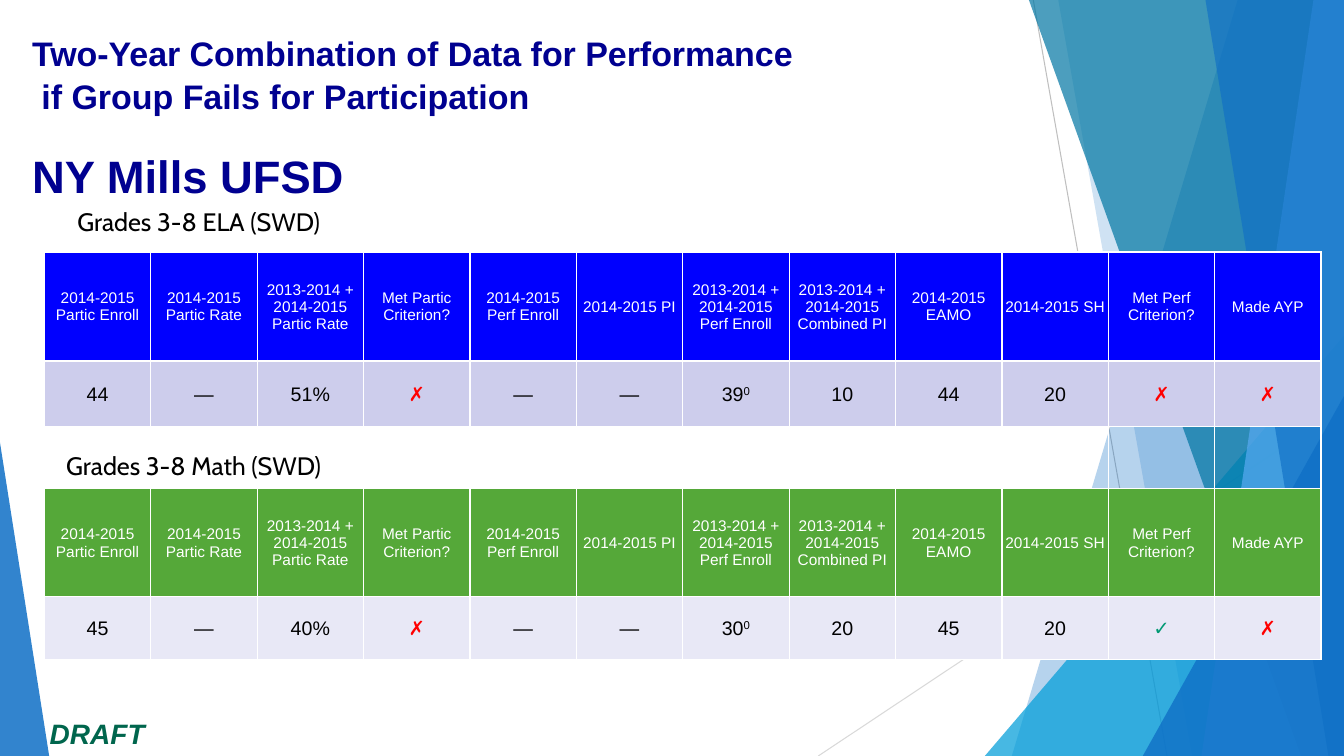
from dataclasses import dataclass

from lxml import etree
from pptx import Presentation
from pptx.dml.color import RGBColor
from pptx.enum.shapes import MSO_CONNECTOR, MSO_SHAPE
from pptx.enum.text import MSO_ANCHOR, PP_ALIGN
from pptx.oxml.ns import qn
from pptx.util import Cm, Pt

LINE = MSO_CONNECTOR.STRAIGHT
TRIANGLE = MSO_SHAPE.ISOSCELES_TRIANGLE
MIDDLE = MSO_ANCHOR.MIDDLE
LEFT, CENTER = PP_ALIGN.LEFT, PP_ALIGN.CENTER
WIDE, HIGH = 33.87, 19.05
WHITE, BLACK, NAVY = "FFFFFF", "000000", "000090"


@dataclass
class Band:
    """Facet with a sloped left side that fills up to the right slide edge."""
    top: float
    base: float
    color: str
    alpha: int


@dataclass
class Wedge:
    """Right-angled triangle standing on the bottom slide edge."""
    left: float
    top: float
    width: float
    apex: float
    color: str
    alpha: int


@dataclass
class Ray:
    start: tuple[float, float]
    end: tuple[float, float]
    color: str


@dataclass
class Line:
    text: str
    size: float
    before: float = 0


@dataclass
class Label:
    left: float
    top: float
    width: float
    height: float
    lines: list[Line]
    font: str
    color: str
    bold: bool = False
    italic: bool = False
    align: PP_ALIGN = LEFT


@dataclass
class Row:
    height: float
    texts: list[str]
    fill: str | None = None
    size: float = 14
    color: str = BLACK
    base: float = 1


RAYS = [
    Ray((26.04, 0), (29.41, HIGH), "BFBFBF"),
    Ray((WIDE, 10.24), (20.62, HIGH), "D9D9D9"),
]
FACETS = [
    Band(31.19, 25.5, "0F6FC6", 30),
    Band(26.67, 30.05, "0F6FC6", 20),
    Wedge(24.82, 8.46, 9.05, 1, "009DD9", 72),
    Band(25.93, 32.79, "0076A3", 70),
    Band(33.1, 30.28, "59AAF2", 70),
    Band(30.38, 33.48, "0F6FC6", 65),
    Wedge(28.8, 9.98, 5.07, 1, "0F6FC6", 80),
    Wedge(0, 11.15, 1.24, 0, "0F6FC6", 85),
]
HEADS = [
    "2014-2015 Partic Enroll", "2014-2015 Partic Rate",
    "2013-2014 + 2014-2015 Partic Rate", "Met Partic Criterion?",
    "2014-2015 Perf Enroll", "2014-2015 PI",
    "2013-2014 + 2014-2015 Perf Enroll", "2013-2014 + 2014-2015 Combined PI",
    "2014-2015 EAMO", "2014-2015 SH", "Met Perf Criterion?", "Made AYP",
]
# A caret marks the start of a superscript.
ELA = ["44", "—", "51%", "✗", "—", "—", "39^0", "10", "44", "20", "✗", "✗"]
MATH = ["45", "—", "40%", "✗", "—", "—", "30^0", "20", "45", "20", "✓", "✗"]
MARKS = {"✗": "FF0000", "✓": "009973"}
ROWS = [
    Row(2.74, HEADS, "0000FF", 11, WHITE, 1.5),
    Row(1.66, ELA, "CDCDEC"),
    Row(1.55, [""] * len(HEADS)),
    Row(2.74, HEADS, "55A839", 11, WHITE),
    Row(1.57, MATH, "E8E8F6"),
]
TITLE = [
    Line("Two-Year Combination of Data for Performance", 24.3),
    Line(" if Group Fails for Participation", 24.3, 1.4),
    Line("NY Mills UFSD", 32.4, 22.5),
]
LABELS = [
    Label(0.56, 0.7, 33.02, 4.3, TITLE, "Arial", NAVY, bold=True),
    Label(1.7, 5.08, 9.88, 1.02, [Line("Grades 3-8 ELA (SWD)", 18)], "Cabin", BLACK),
    Label(1.42, 11.23, 9.88, 1.02, [Line("Grades 3-8 Math (SWD)", 18)], "Cabin", BLACK),
    Label(0.05, 17.93, 4.8, 1.12, [Line("DRAFT", 20)], "Arial", "00664D",
          bold=True, italic=True, align=CENTER),
]


def rgb(code: str) -> RGBColor:
    return RGBColor.from_string(code)


def draw_ray(shapes, ray: Ray) -> None:
    x, y = ray.start
    line = shapes.add_connector(LINE, Cm(x), Cm(y), *map(Cm, ray.end))
    line.line.color.rgb = rgb(ray.color)
    line.line.width = Pt(0.75)
    etree.SubElement(line._element.spPr, qn("a:effectLst"))


def draw_facet(shapes, facet: Band | Wedge) -> None:
    if isinstance(facet, Band):
        build = shapes.build_freeform(Cm(facet.top), 0)
        points = [(WIDE, 0), (WIDE, HIGH), (facet.base, HIGH)]
        build.add_line_segments([(Cm(x), Cm(y)) for x, y in points])
        shape = build.convert_to_shape()
    else:
        shape = shapes.add_shape(TRIANGLE, Cm(facet.left), Cm(facet.top),
                                 Cm(facet.width), Cm(HIGH - facet.top))
        shape.adjustments[0] = facet.apex
    shape.shadow.inherit = False
    shape.line.fill.background()
    shape.fill.solid()
    shape.fill.fore_color.rgb = rgb(facet.color)
    tint = shape._element.spPr.find(qn("a:solidFill"))[0]
    etree.SubElement(tint, qn("a:alpha"), val=str(facet.alpha * 1000))


def draw_label(shapes, label: Label) -> None:
    box = shapes.add_textbox(Cm(label.left), Cm(label.top),
                             Cm(label.width), Cm(label.height))
    frame = box.text_frame
    frame.word_wrap = True
    frame.text = "\n".join(line.text for line in label.lines)
    for par, line in zip(frame.paragraphs, label.lines):
        par.alignment = label.align
        par.space_before = Pt(line.before)
        font = par.runs[0].font
        font.name, font.size = label.font, Pt(line.size)
        font.bold, font.italic = label.bold, label.italic
        font.color.rgb = rgb(label.color)


def set_edges(cell, top: float, base: float) -> None:
    props = cell._tc.get_or_add_tcPr()
    for side, width in zip("LRTB", (1, 1, top, base)):
        edge = etree.SubElement(props, qn(f"a:ln{side}"), w=str(Pt(width)))
        fill = etree.SubElement(edge, qn("a:solidFill"))
        etree.SubElement(fill, qn("a:srgbClr"), val=WHITE)


def fill_cell(cell, text: str, row: Row, top: float) -> None:
    set_edges(cell, top, row.base)
    if row.fill is None:
        cell.fill.background()
        return
    cell.fill.solid()
    cell.fill.fore_color.rgb = rgb(row.fill)
    cell.vertical_anchor = MIDDLE
    cell.margin_left = cell.margin_right = cell.margin_top = Cm(0.03)
    cell.margin_bottom = 0
    par = cell.text_frame.paragraphs[0]
    par.alignment = CENTER
    main, _, power = text.partition("^")
    par.text = main
    if power:
        raised = par.add_run()
        raised.text = power
        raised._r.get_or_add_rPr().set("baseline", "30000")
    for run in par.runs:
        run.font.name, run.font.size = "Arial", Pt(row.size)
        run.font.color.rgb = rgb(MARKS.get(text, row.color))


def draw_table(shapes, rows: list[Row]) -> None:
    count = len(HEADS)
    tall = sum(row.height for row in rows)
    table = shapes.add_table(len(rows), count, Cm(1.12), Cm(6.35),
                             Cm(32.18), Cm(tall)).table
    table.first_row = table.horz_banding = False
    for col in table.columns:
        col.width = Cm(32.18 / count)
    top = 1
    for i, row in enumerate(rows):
        table.rows[i].height = Cm(row.height)
        for j, text in enumerate(row.texts):
            fill_cell(table.cell(i, j), text, row, top)
        top = row.base


def main() -> None:
    deck = Presentation()
    deck.slide_width, deck.slide_height = Cm(WIDE), Cm(HIGH)
    shapes = deck.slides.add_slide(deck.slide_layouts[6]).shapes
    for ray in RAYS:
        draw_ray(shapes, ray)
    for facet in FACETS:
        draw_facet(shapes, facet)
    draw_table(shapes, ROWS)
    for label in LABELS:
        draw_label(shapes, label)
    deck.save("out.pptx")


if __name__ == "__main__":
    main()
